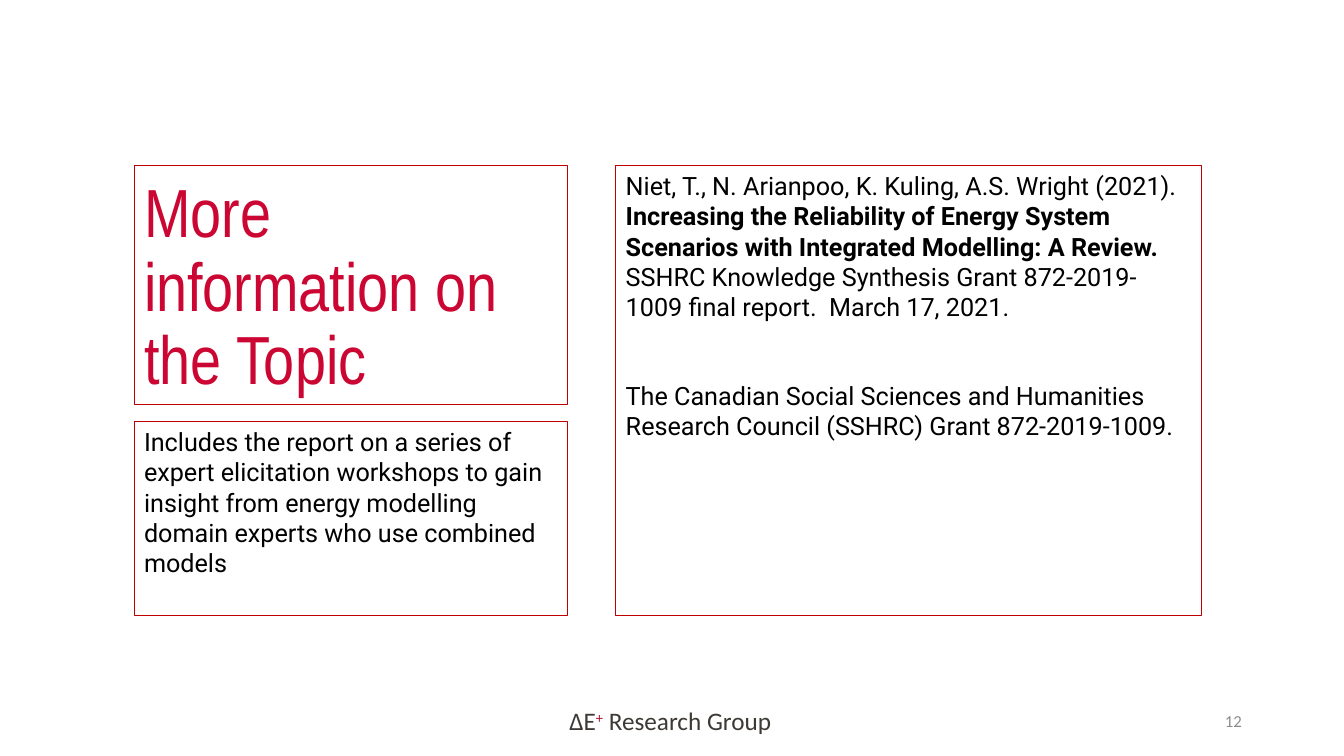
import pptx
import pptx.dml.color
import pptx.enum.shapes
import pptx.enum.text
import pptx.util

Cm = pptx.util.Cm
Pt = pptx.util.Pt
ALIGN = pptx.enum.text.PP_ALIGN
ANCHOR = pptx.enum.text.MSO_ANCHOR

COLOURS = {
    "paper": "FFFFFF",
    "border": "C00000",
    "title": "CC0633",
    "body": "000000",
    "group": "3D3935",
    "plus": "A6192E",
    "number": "8C8C8C",
}
BODY = {"size": Pt(18), "name": "Roboto"}
TITLE = {"size": Pt(48.6), "name": "Arial Narrow"}
GROUP = {"size": Pt(18), "name": "Calibri"}
NUMBER = {"size": Pt(12), "name": "Calibri"}

LEFT, TOP, BOTTOM = 3.38, 4.17, 15.51
LEFT_WIDTH = 10.92
REPORT_TOP = 10.62
FOOTER_TOP, FOOTER_HEIGHT = 17.65, 1.02


def rgb(colour):
    return pptx.dml.color.RGBColor.from_string(COLOURS[colour])


def apply(target, values):
    for name, value in values.items():
        setattr(target, name, value)


def add_frame(page, left, top, width, height):
    box = page.shapes.add_shape(
        pptx.enum.shapes.MSO_SHAPE.RECTANGLE,
        Cm(left), Cm(top), Cm(width), Cm(height),
    )
    box.shadow.inherit = False
    box.fill.background()
    box.line.color.rgb = rgb("border")
    box.line.width = Pt(0.75)
    return box


def add_label(page, left, width):
    return page.shapes.add_textbox(
        Cm(left), Cm(FOOTER_TOP), Cm(width), Cm(FOOTER_HEIGHT)
    )


def write(box, paragraphs, font, para_format=None, anchor=ANCHOR.TOP, wrap=True):
    frame = box.text_frame
    apply(frame, {"word_wrap": wrap, "vertical_anchor": anchor})
    for index, spans in enumerate(paragraphs):
        para = frame.add_paragraph() if index else frame.paragraphs[0]
        apply(para, {"alignment": ALIGN.LEFT, **(para_format or {})})
        if index:
            para.space_before = Pt(42)
        for text, colour, extra in spans:
            span = para.add_run()
            span.text = text
            apply(span.font, {**font, **extra})
            span.font.color.rgb = rgb(colour)
    return frame


def add_title(page):
    box = add_frame(page, LEFT, TOP, LEFT_WIDTH, 6.02)
    write(box, [[("More information on the Topic", "title", {})]], TITLE,
          {"line_spacing": 0.9}, ANCHOR.BOTTOM)


def add_summary(page):
    box = add_frame(page, LEFT, REPORT_TOP, LEFT_WIDTH, BOTTOM - REPORT_TOP)
    summary = (
        "Includes the report on a series of expert elicitation workshops to gain "
        "insight from energy modelling domain experts who use combined models"
    )
    write(box, [[(summary, "body", {})]], BODY)


def add_references(page):
    box = add_frame(page, 15.52, TOP, 14.76, BOTTOM - TOP)
    report = [
        ("Niet, T., N. Arianpoo, K. Kuling, A.S. Wright (2021).  ", "body", {}),
        ("Increasing the Reliability of Energy System Scenarios with "
         "Integrated Modelling: A Review.", "body", {"bold": True}),
        ("  SSHRC Knowledge Synthesis Grant 872-2019-1009 final report.  "
         "March 17, 2021.", "body", {}),
    ]
    grant = [
        ("The Canadian Social Sciences and Humanities Research Council (SSHRC) "
         "Grant 872-2019-1009.", "body", {}),
    ]
    write(box, [report, grant], BODY)


def add_footer(page):
    group = add_label(page, 14.1, 5.69)
    group.fill.solid()
    group.fill.fore_color.rgb = rgb("paper")
    spans = [("ΔE", "group", {}), ("+", "plus", {}), (" Research Group", "group", {})]
    frame = write(group, [spans], GROUP, wrap=False)
    plus = frame.paragraphs[0].runs[1]
    plus.font._element.set("baseline", "30000")
    number = add_label(page, 23.93, 7.62)
    write(number, [[("12", "number", {})]], NUMBER,
          {"alignment": ALIGN.RIGHT}, ANCHOR.MIDDLE)


def main():
    deck = pptx.Presentation()
    apply(deck, {"slide_width": Cm(33.87), "slide_height": Cm(19.05)})
    page = deck.slides.add_slide(deck.slide_layouts[6])
    add_title(page)
    add_summary(page)
    add_references(page)
    add_footer(page)
    deck.save("out.pptx")


if __name__ == "__main__":
    main()
